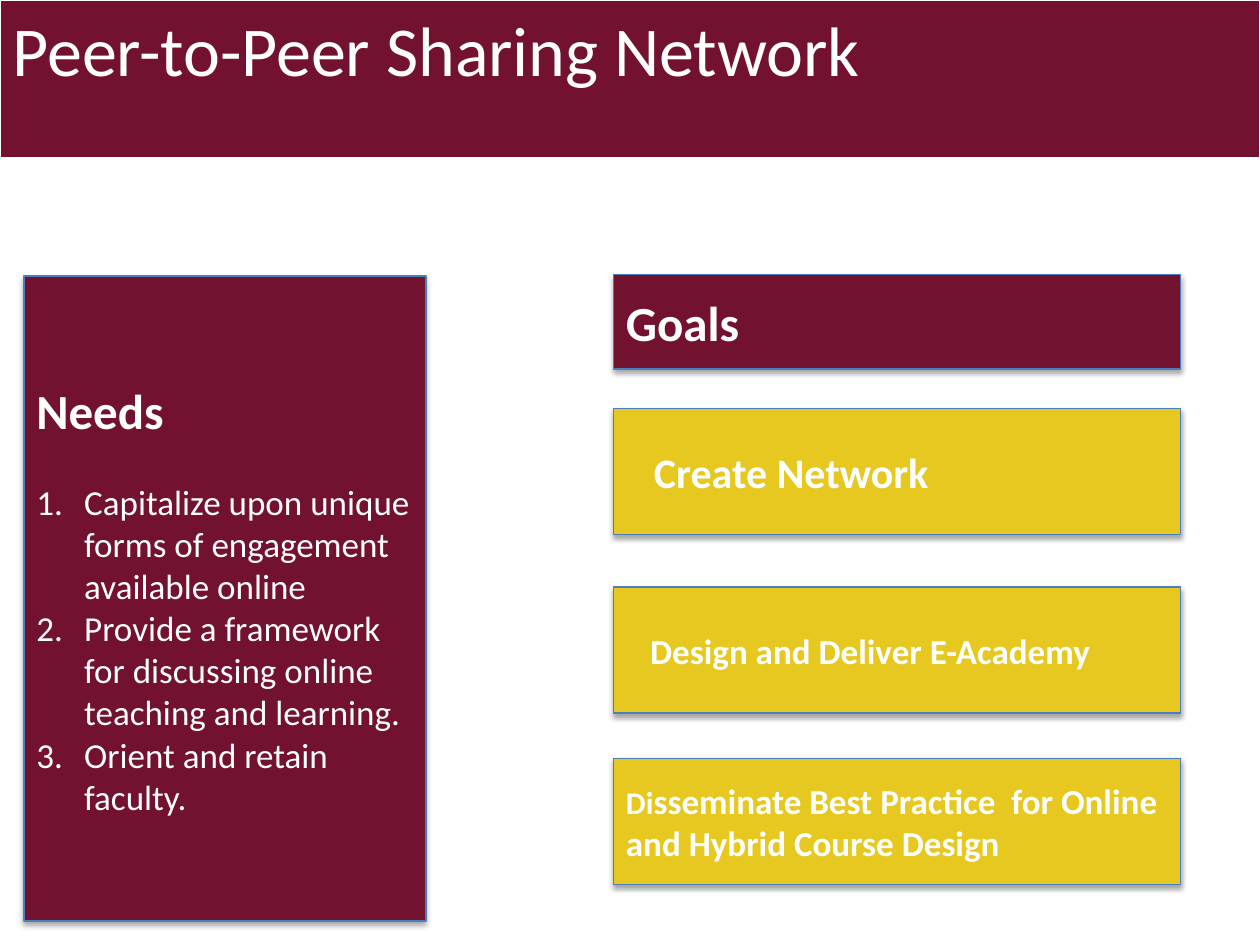
from lxml.etree import SubElement
from pptx import Presentation
from pptx.dml.color import RGBColor
from pptx.enum.shapes import MSO_SHAPE
from pptx.enum.text import MSO_ANCHOR, MSO_AUTO_SIZE, PP_ALIGN
from pptx.oxml.ns import qn
from pptx.util import Inches, Pt

WINE, GOLD, BLUE, WHITE = "73122E", "E6C820", "4B7EBC", "FFFFFF"


def style(shape, fill, line):
    shape.fill.solid()
    shape.fill.fore_color.rgb = RGBColor.from_string(fill)
    shape.line.color.rgb = RGBColor.from_string(line)
    shape.line.width = Pt(0.75)
    shape.shadow.inherit = False
    if line == BLUE:
        effects = shape._element.spPr.find(qn("a:effectLst"))
        shadow = SubElement(effects, qn("a:outerShdw"), blurRad=str(Pt(3.1)),
                            dist=str(Pt(1.8)), dir="5400000", rotWithShape="0")
        color = SubElement(shadow, qn("a:srgbClr"), val="000000")
        SubElement(color, qn("a:alpha"), val="35000")


def write(para, parts, bold):
    para.alignment = PP_ALIGN.LEFT
    for text, size in parts:
        run = para.add_run()
        run.text = text
        run.font.name = "Calibri"
        run.font.size = Pt(size)
        run.font.bold = bold
        run.font.color.rgb = RGBColor.from_string(WHITE)


prs = Presentation()
prs.slide_width, prs.slide_height = Inches(10), Inches(7.5)
slide = prs.slides.add_slide(prs.slide_layouts[5])

title = slide.shapes.title
title.left, title.top = Inches(0), Inches(0)
title.width, title.height = Inches(10), Inches(1.25)
style(title, WINE, WHITE)
title.text_frame.auto_size = MSO_AUTO_SIZE.NONE
title.text_frame.vertical_anchor = MSO_ANCHOR.TOP
write(title.text_frame.paragraphs[0], [("Peer-to-Peer Sharing Network", 40)], False)

boxes = [
    (0.19, 2.19, 3.19, 5.12, WINE, 0.1, [("Needs", 28)]),
    (4.87, 2.18, 4.5, 0.75, WINE, 0.1, [("Goals", 28)]),
    (4.87, 3.24, 4.5, 1, GOLD, 0.32, [("Create Network", 24)]),
    (4.87, 4.66, 4.5, 1, GOLD, 0.29, [("Design and Deliver E-Academy", 20)]),
    (4.87, 6.02, 4.5, 1, GOLD, 0.1,
     [("Di", 18), ("sseminate Best Practice  for Online and Hybrid Course Design", 20)]),
]
frames = []
for left, top, width, height, fill, inset, parts in boxes:
    box = slide.shapes.add_shape(MSO_SHAPE.RECTANGLE, Inches(left), Inches(top),
                                 Inches(width), Inches(height))
    style(box, fill, BLUE)
    frame = box.text_frame
    frame.word_wrap = True
    frame.vertical_anchor = MSO_ANCHOR.MIDDLE
    frame.margin_left = Inches(inset)
    write(frame.paragraphs[0], parts, True)
    frames.append(frame)

needs = frames[0]
needs.paragraphs[0].space_after = Pt(24)
for item in ["Capitalize upon unique forms of engagement available online",
             "Provide a framework for discussing online teaching and learning.",
             "Orient and retain faculty."]:
    para = needs.add_paragraph()
    write(para, [(item, 20)], False)
    props = para._p.get_or_add_pPr()
    props.set("marL", str(Inches(0.38)))
    props.set("indent", str(Inches(-0.38)))
    SubElement(props, qn("a:buFont"), typeface="+mj-lt")
    SubElement(props, qn("a:buAutoNum"), type="arabicPeriod")

prs.save("out.pptx")
